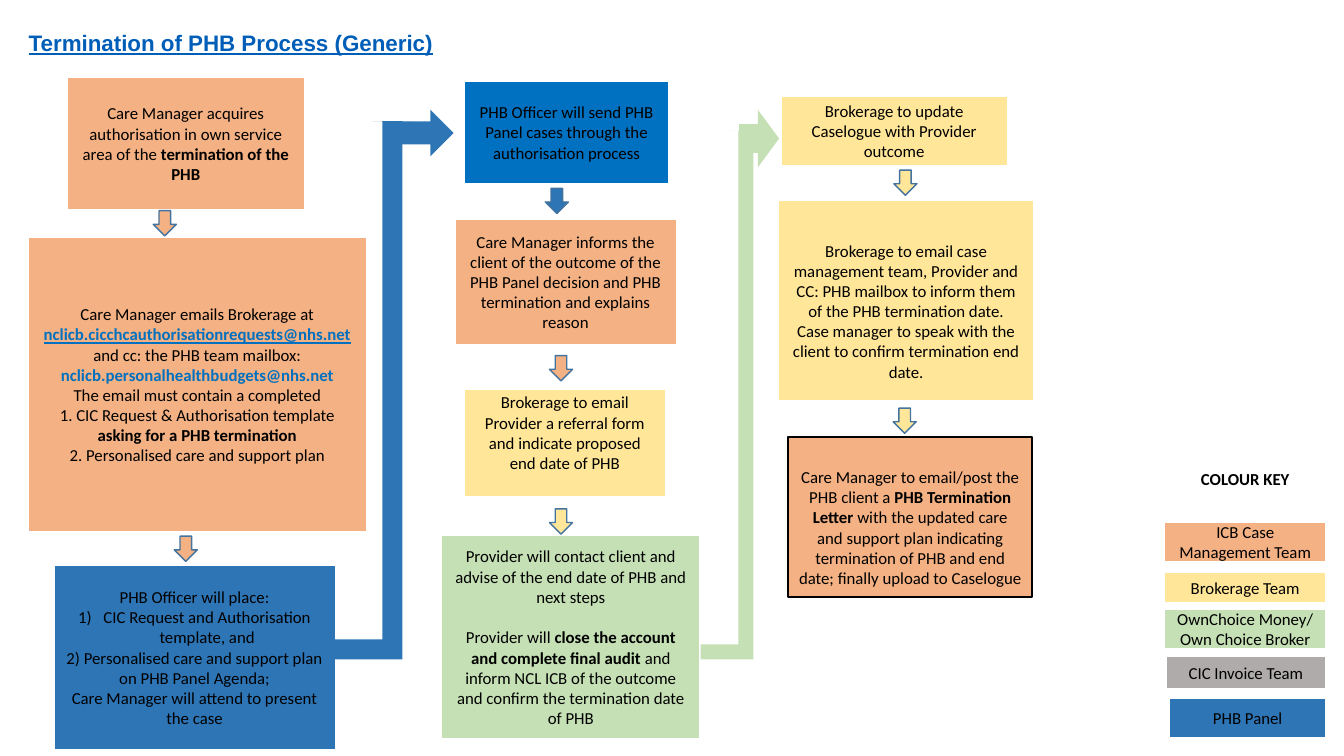
from dataclasses import dataclass
from typing import NamedTuple

from lxml import etree
from pptx import Presentation
from pptx.dml.color import RGBColor
from pptx.enum import shapes, text
from pptx.oxml import ns
from pptx.util import Pt

ORANGE = RGBColor(0xF4, 0xB1, 0x83)
YELLOW = RGBColor(0xFF, 0xE6, 0x99)
GREEN = RGBColor(0xC5, 0xE0, 0xB4)
GREY = RGBColor(0xAF, 0xAB, 0xAB)
PANEL_BLUE = RGBColor(0x2E, 0x75, 0xB6)
BRIGHT_BLUE = RGBColor(0x00, 0x70, 0xC0)
TITLE_BLUE = RGBColor(0x00, 0x5E, 0xB8)
ARROW_EDGE = RGBColor(0x43, 0x73, 0x9E)
BLACK = RGBColor(0, 0, 0)

LINE = 14.65  # height of one line of 12-point body text
INSET = 3.6
MST = shapes.MSO_SHAPE


class Frame(NamedTuple):
    left: float
    top: float
    width: float
    height: float


class Run(NamedTuple):
    words: str
    bold: bool = False
    colour: RGBColor | None = None
    underline: bool = False


def strong(words: str) -> Run:
    return Run(words, bold=True)


def mailbox(words: str, underline: bool = False) -> Run:
    return Run(words, True, BRIGHT_BLUE, underline)


@dataclass
class Para:
    runs: list[Run]
    numbered: bool = False
    before: float = 0


def plain(words: str, numbered: bool = False) -> Para:
    return Para([Run(words)], numbered)


@dataclass
class Step:
    frame: Frame
    fill: RGBColor
    paras: list[Para]
    extra_top: float = 0
    extra_bottom: float = 0
    edge: RGBColor | None = None


@dataclass
class BlockArrow:
    kind: shapes.MSO_SHAPE
    frame: Frame
    fill: RGBColor
    adjustments: tuple[float, ...] = ()
    edge: RGBColor | None = None


def down_arrow(left: float, top: float, fill: RGBColor) -> BlockArrow:
    return BlockArrow(MST.DOWN_ARROW, Frame(left, top, 16.5, 18), fill, edge=ARROW_EDGE)


def key_entry(left: float, top: float, height: float, fill: RGBColor, *lines: str) -> Step:
    return Step(Frame(left, top, 946.5 - left, height), fill, [plain(line) for line in lines])


STEPS = [
    Step(Frame(48.5, 55.5, 168.5, 94), ORANGE, [Para([
        Run("Care Manager acquires authorisation in own service area of the "),
        strong("termination of the PHB")])]),
    Step(Frame(20.5, 170, 241, 209.5), ORANGE, [
        Para([Run("Care Manager emails Brokerage at "),
              mailbox("nclicb.cicchcauthorisationrequests@nhs.net", True)]),
        Para([Run("and cc: the PHB team mailbox: "),
              mailbox("nclicb.personalhealthbudgets@nhs.net")]),
        plain("The email must contain a completed"),
        Para([Run("1. CIC Request & Authorisation template "),
              strong("asking for a PHB termination")]),
        plain("2. Personalised care and support plan")]),
    Step(Frame(39, 404, 200, 131), PANEL_BLUE, [
        plain("PHB Officer will place:"),
        plain("CIC Request and Authorisation template, and", numbered=True),
        plain("2) Personalised care and support plan on PHB Panel Agenda;"),
        plain("Care Manager will attend to present the case")]),
    Step(Frame(332.5, 58.5, 144.5, 72), BRIGHT_BLUE, [
        plain("PHB Officer will send PHB Panel cases through the authorisation process")]),
    Step(Frame(325.5, 157, 157, 88.5), ORANGE, [
        plain("Care Manager informs the client of the outcome of the PHB Panel "
              "decision and PHB termination and explains reason")]),
    Step(Frame(332, 278.5, 143, 75.5), YELLOW, [
        plain("Brokerage to email Provider a referral form and indicate proposed "
              "end date of PHB")], extra_bottom=LINE),
    Step(Frame(316, 383, 183.5, 144), GREEN, [
        plain("Provider will contact client and advise of the end date of PHB and next steps"),
        Para([Run("Provider will "), strong("close the account and complete final audit "),
              Run("and inform NCL ICB of the outcome and confirm the termination "
                  "date of PHB")], before=LINE)]),
    Step(Frame(558.5, 69, 160.5, 49), YELLOW, [
        plain("Brokerage to update Caselogue with Provider outcome")]),
    Step(Frame(556.5, 143.5, 181.5, 142.5), YELLOW, [
        plain("Brokerage to email case management team, Provider and CC: PHB mailbox "
              "to inform them of the PHB termination date."),
        plain("Case manager to speak with the client to confirm termination end date.")],
        extra_top=LINE),
    Step(Frame(563, 312, 174.5, 114.5), ORANGE, [Para([
        Run("Care Manager to email/post the PHB client a "),
        strong("PHB Termination Letter "),
        Run("with the updated care and support plan indicating termination of PHB "
            "and end date; finally upload to Caselogue")])], extra_top=LINE, edge=BLACK),
]

COLOUR_KEY = [
    key_entry(832.5, 373.5, 27.5, ORANGE, "ICB Case Management Team"),
    key_entry(832.5, 409, 21, YELLOW, "Brokerage Team"),
    key_entry(832.5, 435.5, 27.5, GREEN, "OwnChoice Money/", "Own Choice Broker"),
    key_entry(833.5, 469.5, 22, GREY, "CIC Invoice Team"),
    key_entry(836, 499, 27.5, PANEL_BLUE, "PHB Panel"),
]

ARROWS = [
    BlockArrow(MST.BENT_UP_ARROW, Frame(237.5, 86.5, 57, 384.5), PANEL_BLUE, (0.25, 0.25, 0)),
    BlockArrow(MST.RIGHT_ARROW, Frame(286.5, 78.5, 37.5, 33), PANEL_BLUE),
    BlockArrow(MST.BENT_UP_ARROW, Frame(500.5, 93.5, 43, 377.5), GREEN, (0.25, 0.25, 0)),
    BlockArrow(MST.RIGHT_ARROW, Frame(528, 78.5, 28.5, 41), GREEN, (0.5, 0.53)),
    down_arrow(109.5, 150.5, ORANGE),
    down_arrow(124.5, 383, ORANGE),
    down_arrow(389.5, 134.5, PANEL_BLUE),
    down_arrow(392.5, 254, ORANGE),
    down_arrow(392.5, 363.5, YELLOW),
    down_arrow(638.5, 121.5, YELLOW),
    down_arrow(638, 291.5, YELLOW),
]


def add_block(slide, kind: shapes.MSO_SHAPE, frame: Frame, fill: RGBColor,
              edge: RGBColor | None, edge_width: float):
    block = slide.shapes.add_shape(kind, *map(Pt, frame))
    block.shadow.inherit = False
    block.fill.solid()
    block.fill.fore_color.rgb = fill
    if edge is None:
        block.line.fill.background()
    else:
        block.line.color.rgb = edge
        block.line.width = Pt(edge_width)
    return block


def number_paragraph(paragraph) -> None:
    props = paragraph._p.get_or_add_pPr()
    props.set("marL", str(Pt(18)))
    props.set("indent", str(-Pt(18)))
    etree.SubElement(props, ns.qn("a:buFont"), typeface="+mj-lt")
    etree.SubElement(props, ns.qn("a:buAutoNum"), type="arabicParenR")


def write(frame, paras: list[Para], bold: bool | None = None) -> None:
    """Fill a text frame with centred 12-point paragraphs."""
    frame.word_wrap = True
    for index, para in enumerate(paras):
        paragraph = frame.paragraphs[0] if index == 0 else frame.add_paragraph()
        paragraph.alignment = text.PP_ALIGN.CENTER
        if para.before:
            paragraph.space_before = Pt(para.before)
        if para.numbered:
            number_paragraph(paragraph)
        paragraph.font.name, paragraph.font.size = "Calibri", Pt(12)
        paragraph.font.color.rgb = BLACK
        paragraph.font.bold = bold
        for part in para.runs:
            run = paragraph.add_run()
            run.text = part.words
            run.font.name, run.font.size = "Calibri", Pt(12)
            run.font.bold = part.bold or bold
            run.font.underline = part.underline or None
            run.font.color.rgb = part.colour or BLACK


def draw_step(slide, step: Step) -> None:
    box = add_block(slide, MST.FLOWCHART_PROCESS, step.frame, step.fill, step.edge, 1.5)
    box.text_frame.vertical_anchor = text.MSO_ANCHOR.MIDDLE
    box.text_frame.margin_top = Pt(INSET + step.extra_top)
    box.text_frame.margin_bottom = Pt(INSET + step.extra_bottom)
    write(box.text_frame, step.paras)


def draw_arrow(slide, arrow: BlockArrow) -> None:
    block = add_block(slide, arrow.kind, arrow.frame, arrow.fill, arrow.edge, 1)
    for index, value in enumerate(arrow.adjustments):
        block.adjustments[index] = value


def draw_title(slide) -> None:
    title = slide.shapes.add_textbox(Pt(20.5), Pt(23), Pt(832), Pt(39)).text_frame
    title.word_wrap = True
    title.margin_left = title.margin_top = title.margin_right = title.margin_bottom = 0
    heading = title.paragraphs[0]
    heading.line_spacing = 0.9
    run = heading.add_run()
    run.text = "Termination of PHB Process (Generic)"
    for font in (heading.font, run.font):
        font.name, font.size, font.bold, font.underline = "Arial", Pt(16), True, True
        font.color.rgb = TITLE_BLUE


def main() -> None:
    deck = Presentation()
    deck.slide_width, deck.slide_height = Pt(960), Pt(540)
    slide = deck.slides.add_slide(deck.slide_layouts[6])
    draw_title(slide)
    for arrow in ARROWS:
        draw_arrow(slide, arrow)
    for step in STEPS + COLOUR_KEY:
        draw_step(slide, step)
    key_heading = slide.shapes.add_textbox(Pt(823.5), Pt(331), Pt(132), Pt(22))
    write(key_heading.text_frame, [plain("COLOUR KEY")], bold=True)
    deck.save("out.pptx")


if __name__ == "__main__":
    main()
